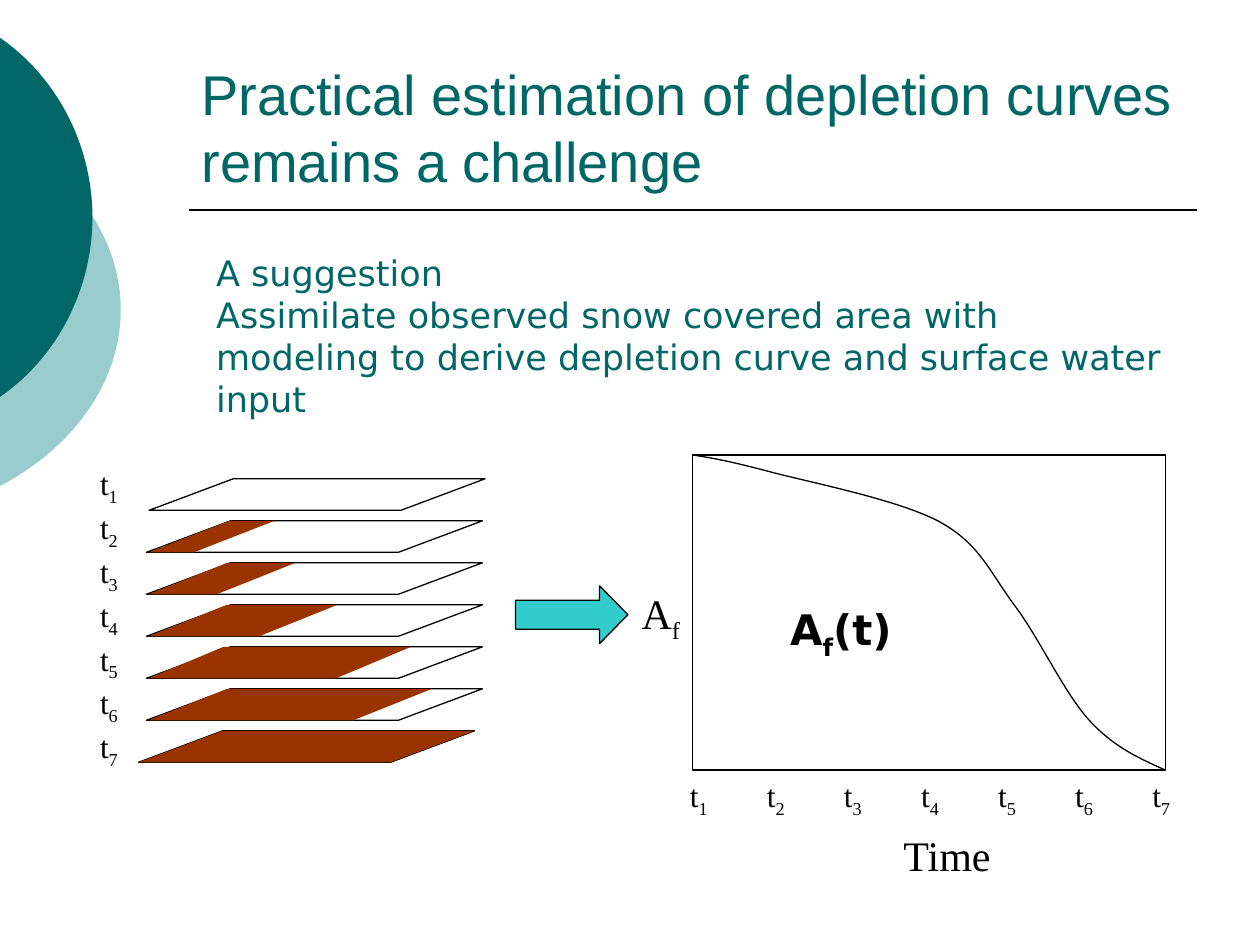
from dataclasses import dataclass

from lxml import etree
from pptx import Presentation
from pptx.dml.color import RGBColor
from pptx.enum.shapes import MSO_CONNECTOR, MSO_SHAPE
from pptx.enum.text import MSO_ANCHOR
from pptx.oxml.ns import qn
from pptx.util import Inches, Pt

SHEET = MSO_SHAPE.PARALLELOGRAM
ARROW = MSO_SHAPE.RIGHT_ARROW
RECT = MSO_SHAPE.RECTANGLE
LINE = MSO_CONNECTOR.STRAIGHT
TOP, BOTTOM = MSO_ANCHOR.TOP, MSO_ANCHOR.BOTTOM

# The slide is a grid of 120 columns by 90 rows
COLS, ROWS = 120, 90
UNIT = Inches(10) / COLS
TIMES = 7


@dataclass(frozen=True)
class Theme:
    teal: str = "006666"
    pale: str = "99CCCC"
    aqua: str = "33CCCC"
    brown: str = "993300"
    white: str = "FFFFFF"
    ink: str = "000000"
    head: str = "Arial"
    body: str = "DejaVu Sans"
    serif: str = "Times New Roman"
    title: int = 32
    label: int = 24
    note: int = 20
    tick: int = 18
    thin: float = 0.75
    rule: float = 1


T = Theme()


def grid(*cells):
    return [round(c * UNIT) for c in cells]


def paint(shape, fill=None, line=None):
    shape.shadow.inherit = False
    if fill:
        shape.fill.solid()
        shape.fill.fore_color.rgb = RGBColor.from_string(fill)
    else:
        shape.fill.background()
    if line:
        shape.line.color.rgb = RGBColor.from_string(line)
        shape.line.width = Pt(T.thin)
    else:
        shape.line.fill.background()


def block(slide, kind, box, fill=None, line=None, adj=()):
    shape = slide.shapes.add_shape(kind, *grid(*box))
    for i, value in enumerate(adj):
        shape.adjustments[i] = value
    paint(shape, fill, line)


def write(slide, box, paras, face, size, color=T.ink, bold=False,
          anchor=TOP, wrap=True):
    """Each paragraph is a list of runs; a run starting with _ is a subscript."""
    frame = slide.shapes.add_textbox(*grid(*box)).text_frame
    frame.word_wrap = wrap
    frame.vertical_anchor = anchor
    for i, runs in enumerate(paras):
        para = frame.add_paragraph() if i else frame.paragraphs[0]
        for text in runs:
            run = para.add_run()
            run.text = text.lstrip("_")
            font = run.font
            font.name, font.size, font.bold = face, Pt(size), bold
            font.color.rgb = RGBColor.from_string(color)
            if text.startswith("_"):
                font._element.set("baseline", "-25000")


def outline(slide, box, start, curves, close, fill=None, line=None):
    """Chain of cubic curves; points are columns and rows inside the box."""
    x, y, w, h = box
    form = slide.shapes.build_freeform(*grid(x, y))
    form.add_line_segments([grid(x + w, y + h)], close=False)
    shape = form.convert_to_shape()
    track = shape._element.find(".//" + qn("a:path"))
    for old in list(track):
        track.remove(old)
    steps = [("a:moveTo", [start])] + [("a:cubicBezTo", c) for c in curves]
    for tag, points in steps:
        step = etree.SubElement(track, qn(tag))
        for point in points:
            px, py = grid(*point)
            etree.SubElement(step, qn("a:pt"), x=str(px), y=str(py))
    if close:
        etree.SubElement(track, qn("a:close"))
    paint(shape, fill, line)


def disc(slide, box, cap, color):
    """Disc bleeding off the left edge; only its cap on the slide is drawn."""
    x, y, w, h = box
    bend, top, high, mid, low, deep, end = cap
    outline(slide, box, (-x, top),
            [((bend - x, high[0]), (w, high[1]), (w, mid)),
             ((w, low), (bend - x, deep), (-x, end))], True, color)


def header(slide, box):
    x, y, w, h = box
    write(slide, (x, y, w, h * 0.94),
          [["Practical estimation of depletion curves remains a challenge"]],
          T.head, T.title, T.teal, anchor=BOTTOM)
    rule = slide.shapes.add_connector(LINE, *grid(x, y + h, x + w, y + h))
    rule.line.color.rgb = RGBColor.from_string(T.ink)
    rule.line.width = Pt(T.rule)
    etree.SubElement(rule._element.spPr, qn("a:effectLst"))


def advice(slide, box):
    write(slide, box, [
        ["A suggestion"],
        ["Assimilate observed snow covered area with modeling to derive "
         "depletion curve and surface water input"],
    ], T.body, T.note, T.teal)


def tick(slide, x, y, n):
    write(slide, (x, y, 4.8, 4.8), [["t", f"_{n}"]], T.serif, T.tick)


def stack(slide, box):
    """Sheets of snow cover, with bare ground growing over time."""
    x, y, w, h = box
    wide, high, tilt = 32, 3, 2.67
    bare = [(0, 0), (12, 2.56), (14, 2.5), (18, 2.49),
            (25, 2.38), (27, 2.5), (32, tilt)]
    shift = [5.85] + [5.6] * 5 + [4.85]
    for i, ((span, slant), dx) in enumerate(zip(bare, shift)):
        top = y + 2 + i * (h - 2 - high) / (TIMES - 1)
        block(slide, SHEET, (x + dx, top, wide, high),
              T.white, T.ink, [tilt])
        if span:
            left = x + dx + (0.2 if span < wide else 0)
            block(slide, SHEET, (left, top, span, high), T.brown, adj=[slant])
        tick(slide, x, y + 4.18 * i, i + 1)


def plot(slide, box):
    """Depletion curve in its frame, with axis labels."""
    x, y, w, h = box
    block(slide, RECT, box, line=T.ink)
    outline(slide, box, (0, 0), [
        ((1.6, 0.24), (3.2, 0.5), (7.2, 1.55)),
        ((11.1, 2.6), (19.4, 4.2), (23.4, 6.3)),
        ((27.3, 8.4), (28.2, 11), (30.6, 14.25)),
        ((33, 17.4), (35.4, 22.7), (37.8, 25.3)),
        ((40.2, 27.9), (42.6, 28.9), (w, h)),
    ], False, line=T.ink)
    for i in range(TIMES):
        tick(slide, x - 1.45 + 7.34 * i, y + h, i + 1)
    write(slide, (x - 6.05, y + 0.4 * h, 6.24, 6), [["A", "_f"]],
          T.serif, T.label)
    write(slide, (x + 0.42 * w, y + 1.17 * h, 10.8, 6), [["Time"]],
          T.serif, T.label, wrap=False)
    write(slide, (x + 0.18 * w, y + 0.453 * h, 19.6, 6), [["A", "_f", "(t)"]],
          T.body, T.label, bold=True)


def main():
    deck = Presentation()
    deck.slide_width, deck.slide_height = grid(COLS, ROWS)
    slide = deck.slides.add_slide(deck.slide_layouts[6])
    disc(slide, (-42.5, 9, 54, 41),
         (7.2, 3.7, (7.6, 13.8), 20.5, 27.2, 33.5, 37.3), T.pale)
    disc(slide, (-31.8, 0, 40.6, 41.4),
         (5.5, 3.6, (7.4, 13.9), 20.7, 27.5, 34, 37.8), T.teal)
    header(slide, (18, 4, 96, 16))
    advice(slide, (19.4, 23.4, 93.2, 17.2))
    stack(slide, (8.35, 43.6, 37.8, 29))
    block(slide, ARROW, (49.1, 55.8, 10.7, 5.5), T.aqua, T.ink, [0.5, 0.49])
    plot(slide, (65.97, 43.34, 45, 30))
    deck.save("out.pptx")


if __name__ == "__main__":
    main()
